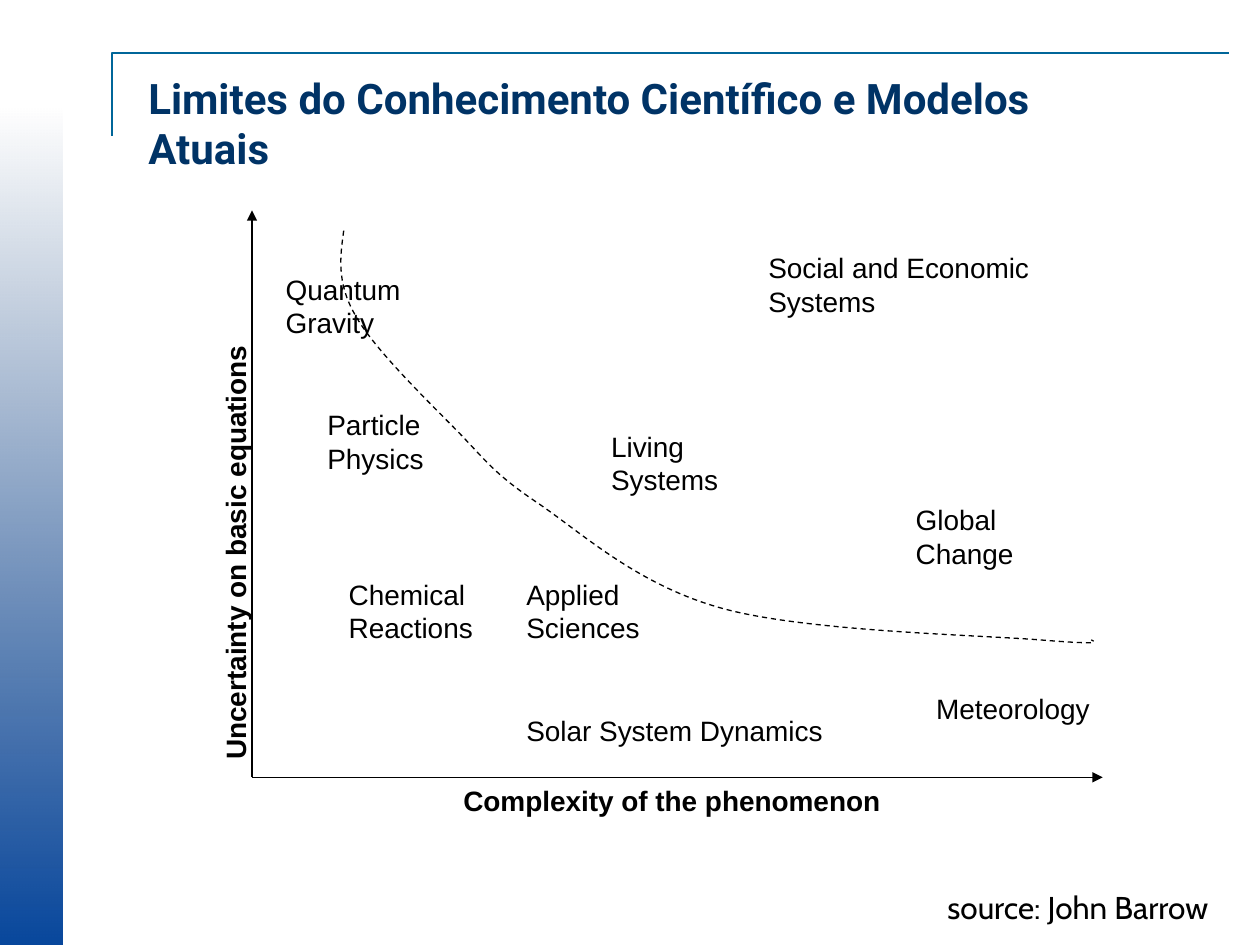
import pptx
import pptx.dml.color
import pptx.enum.dml
import pptx.enum.shapes
import pptx.enum.text
import pptx.oxml.ns
import pptx.oxml.xmlchemy
import pptx.util

# Content; all lengths in centimetres
TITLE = "Limites do Conhecimento Científico e Modelos Atuais"
SOURCE = "source: John Barrow"
X_TITLE = "Complexity of the phenomenon"
Y_TITLE = "Uncertainty on basic equations"
LABELS = [  # lines, left, top, width
    (["Solar System Dynamics"], 10.36, 14.25, 6.5),
    (["Meteorology"], 18.62, 13.82, 3.61),
    (["Chemical", "Reactions"], 6.78, 11.51, 3.02),
    (["Applied", "Sciences"], 10.36, 11.51, 2.79),
    (["Particle", "Physics"], 6.35, 8.1, 2.46),
    (["Quantum", "Gravity"], 5.51, 5.36, 3),
    (["Living", "Systems"], 12.07, 8.53, 2.67),
    (["Global", "Change"], 18.21, 10.01, 2.49),
    (["Social and Economic", "Systems"], 15.24, 4.93, 5.77),
]
LABEL_HEIGHTS = {1: 0.94, 2: 1.63}
ORIGIN = (5.08, 15.67)
AXIS_ENDS = [(5.08, 4.24), (22.23, 15.67)]
FRAME = [(2.26, 2.74), (2.26, 1.07), (24.77, 1.07)]
CURVE = [  # start, then two control points and an end point per segment
    (6.93, 4.65),
    (6.86, 5.16), (6.78, 5.69), (7.16, 6.35),
    (7.52, 7.01), (8.59, 8.05), (9.22, 8.69),
    (9.83, 9.32), (9.96, 9.55), (10.87, 10.16),
    (11.76, 10.77), (12.88, 11.81), (14.58, 12.27),
    (16.26, 12.73), (19.71, 12.8), (20.96, 12.9),
    (22.2, 13), (22.1, 12.95), (22, 12.9),
]

Cm = pptx.util.Cm
qn = pptx.oxml.ns.qn
deck = pptx.Presentation()
deck.slide_width, deck.slide_height = Cm(25.4), Cm(19.05)
page = deck.slides.add_slide(deck.slide_layouts[6])


def color(value):
    return pptx.dml.color.RGBColor.from_string(value)


def add_element(parent, tag, **attributes):
    element = pptx.oxml.xmlchemy.OxmlElement(tag)
    for name, value in attributes.items():
        element.set(name, value)
    parent.append(element)
    return element


def set_line(shape, value, width):
    shape.line.color.rgb = color(value)
    shape.line.width = pptx.util.Pt(width)


def add_outline(points, value, width):
    corners = [(Cm(x), Cm(y)) for x, y in points]
    builder = page.shapes.build_freeform(*corners[0])
    builder.add_line_segments(corners[1:], close=False)
    outline = builder.convert_to_shape()
    outline.shadow.inherit = False
    outline.fill.background()
    set_line(outline, value, width)
    return outline


def add_text(lines, left, top, width, height, size=16, font="Arial",
             value="000000", bold=False, wrap=False, anchor="TOP"):
    box = page.shapes.add_textbox(Cm(left), Cm(top), Cm(width), Cm(height))
    frame = box.text_frame
    frame.text = "\n".join(lines)
    frame.word_wrap = wrap
    frame.vertical_anchor = pptx.enum.text.MSO_ANCHOR[anchor]
    for para in frame.paragraphs:
        for span in para.runs:
            span.font.name = font
            span.font.size = pptx.util.Pt(size)
            span.font.bold = bold
            span.font.color.rgb = color(value)
    return box


# Side bar, fading out towards the top
bar = page.shapes.add_shape(pptx.enum.shapes.MSO_SHAPE.RECTANGLE,
                            Cm(0), Cm(2.13), Cm(1.27), Cm(16.92))
bar.shadow.inherit = False
bar.line.fill.background()
bar.fill.gradient()
bar.fill.gradient_angle = 90
for stop, value in zip(bar.fill.gradient_stops, ("08479C", "063370")):
    stop.color.rgb = color(value)
stop_colors = list(bar._element.spPr.iter(qn("a:srgbClr")))
add_element(stop_colors[-1], "a:alpha", val="0")

# Title with its corner frame, and the source
add_outline(FRAME, "006699", 1.5)
add_text([TITLE], 2.74, 0.84, 20.45, 3.28, size=24, font="Roboto",
         value="003366", bold=True, wrap=True, anchor="MIDDLE")
add_text([SOURCE], 18.85, 17.78, 6.27, 1.02, size=18, font="Cabin")

# Axes and their titles
for end in AXIS_ENDS:
    axis = page.shapes.add_connector(
        pptx.enum.shapes.MSO_CONNECTOR.STRAIGHT,
        *(Cm(value) for value in ORIGIN + end))
    set_line(axis, "000000", 0.75)
    axis_line = axis._element.spPr.find(qn("a:ln"))
    add_element(axis_line, "a:tailEnd", type="triangle")
    add_element(axis._element.spPr, "a:effectLst")
add_text([X_TITLE], 9.09, 15.67, 8.94, 0.94, bold=True)
y_title = add_text([Y_TITLE], 4.01, 3.4, 1.19, 12.17, bold=True, wrap=True,
                   anchor="BOTTOM")
y_title._element.txBody.find(qn("a:bodyPr")).set("vert", "vert270")

# Dashed boundary: every three straight segments become one Bézier segment
curve = add_outline(CURVE, "000000", 0.75)
curve.line.dash_style = pptx.enum.dml.MSO_LINE.DASH
outline_path = next(curve._element.iter(qn("a:path")))
segments = outline_path.findall(qn("a:lnTo"))
for start in range(0, len(segments), 3):
    bezier = add_element(outline_path, "a:cubicBezTo")
    for segment in segments[start:start + 3]:
        bezier.append(segment[0])
        outline_path.remove(segment)

# Fields of science
for lines, left, top, width in LABELS:
    add_text(lines, left, top, width, LABEL_HEIGHTS[len(lines)])

deck.save("out.pptx")
